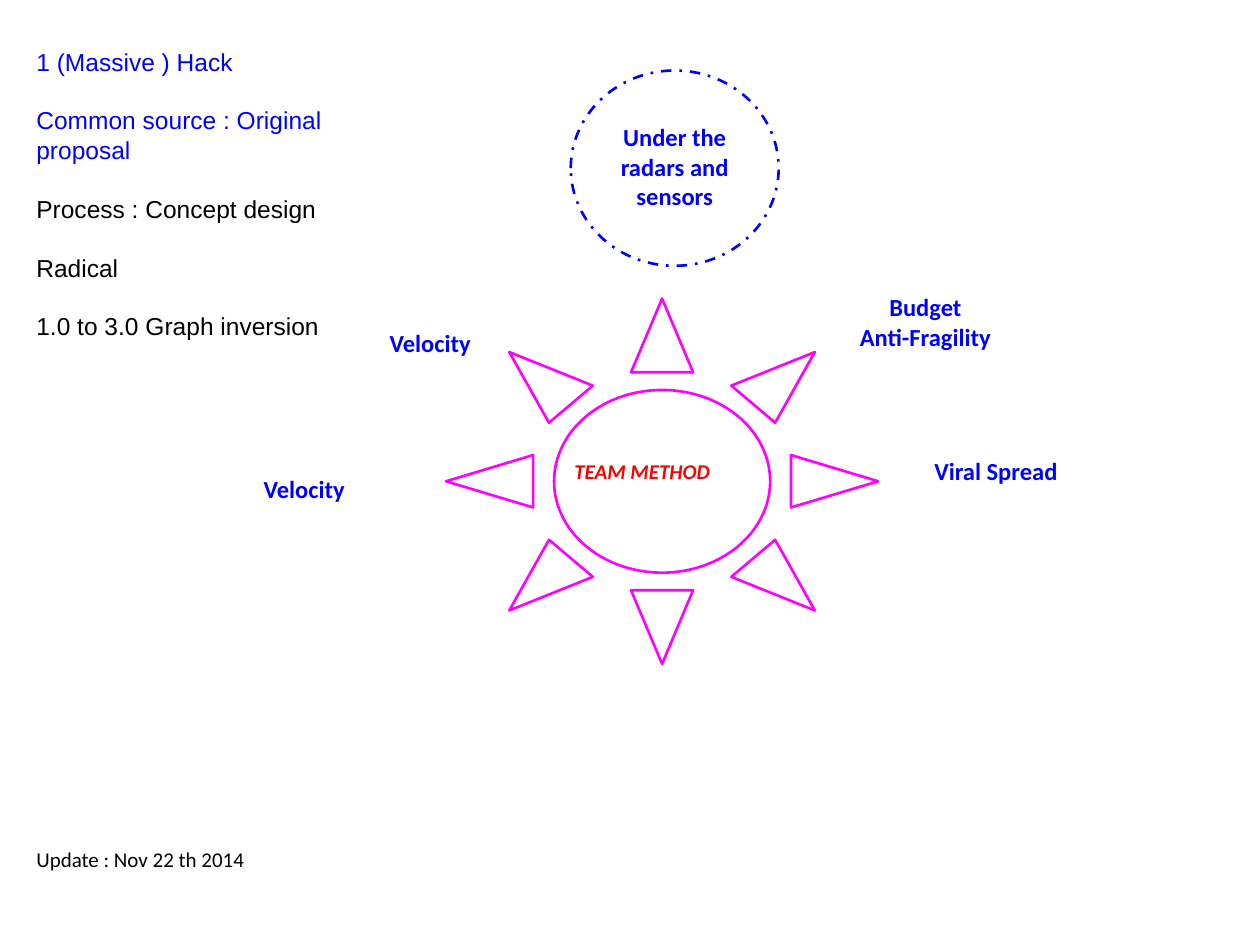
from pptx import Presentation
from pptx.dml.color import RGBColor
from pptx.enum.dml import MSO_LINE
from pptx.enum.shapes import MSO_SHAPE
from pptx.enum.text import MSO_ANCHOR, PP_ALIGN
from pptx.util import Inches, Pt

BLUE = RGBColor(0x00, 0x00, 0xFF)
MAGENTA = RGBColor(0xFF, 0x00, 0xFF)
RED = RGBColor(0xFF, 0x00, 0x00)
BLACK = RGBColor(0x00, 0x00, 0x00)
LEFT, CENTER = PP_ALIGN.LEFT, PP_ALIGN.CENTER
MIDDLE = MSO_ANCHOR.MIDDLE
DASH_DOT = MSO_LINE.DASH_DOT
SUN, OVAL = MSO_SHAPE.SUN, MSO_SHAPE.OVAL

prs = Presentation()
prs.slide_width, prs.slide_height = Inches(10), Inches(7.5)
slide = prs.slides.add_slide(prs.slide_layouts[6])


def add_outline(preset, box, color):
    outline = slide.shapes.add_shape(preset, *map(Inches, box))
    outline.shadow.inherit = False
    outline.fill.background()
    outline.line.color.rgb = color
    outline.line.width = Pt(1.5)
    return outline


def add_text(lines, box, size=14, color=BLUE, font="Calibri", bold=True, align=CENTER):
    frame = slide.shapes.add_textbox(*map(Inches, box)).text_frame
    frame.word_wrap = True
    frame.margin_left = frame.margin_right = Inches(0.1)
    frame.margin_top = frame.margin_bottom = Inches(0.1)
    frame.text = "\n".join(lines)
    for paragraph in frame.paragraphs:
        paragraph.alignment = align
        for run in paragraph.runs:
            run.font.name = font
            run.font.size = Pt(size)
            run.font.bold = bold
            run.font.color.rgb = color
    return frame


sun = add_outline(SUN, (3.54, 2.37, 3.43, 2.9), MAGENTA)
sun.adjustments[0] = 0.25
radar = add_outline(OVAL, (4.53, 0.56, 1.65, 1.55), BLUE)
radar.line.dash_style = DASH_DOT

for lines, box in [
    (["Velocity"], (2.78, 2.5, 1.27, 0.31)),
    (["Under the radars and sensors"], (4.6, 0.87, 1.51, 0.93)),
    (["Budget", "Anti-Fragility"], (6.63, 2.22, 1.43, 0.59)),
    (["Viral Spread"], (7.19, 3.52, 1.43, 0.59)),
    (["Velocity"], (1.78, 3.66, 1.27, 0.31)),
]:
    add_text(lines, box)

method = add_text(["TEAM METHOD"], (4.46, 3.54, 1.81, 0.41),
                  size=12, color=RED, align=LEFT)
method.paragraphs[0].runs[0].font.italic = True

summary = add_text(
    ["1 (Massive ) Hack", "Common source : Original proposal",
     "Process : Concept design", "Radical", "1.0 to 3.0 Graph inversion"],
    (0.19, 0.27, 2.59, 2.68), color=BLACK, font="Arial", bold=False, align=LEFT)
for paragraph in summary.paragraphs:
    paragraph.line_spacing = paragraph.space_after = Pt(16.8)
for paragraph in summary.paragraphs[:2]:
    paragraph.runs[0].font.color.rgb = BLUE

update = add_text(["Update : Nov 22 th 2014"], (0.19, 6.69, 3.28, 0.26),
                  size=12, color=BLACK, bold=False, align=LEFT)
update.vertical_anchor = MIDDLE

prs.save("out.pptx")
